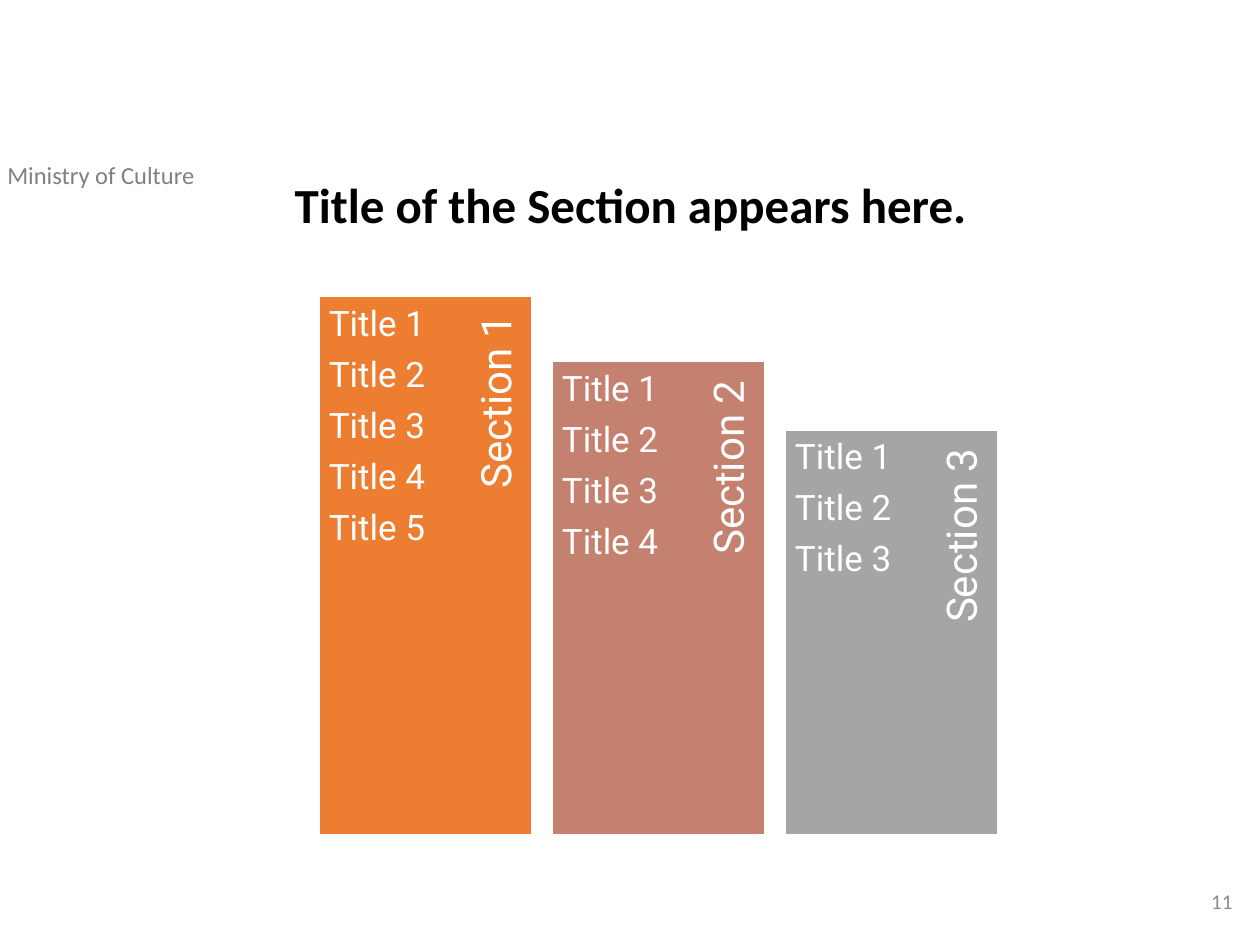
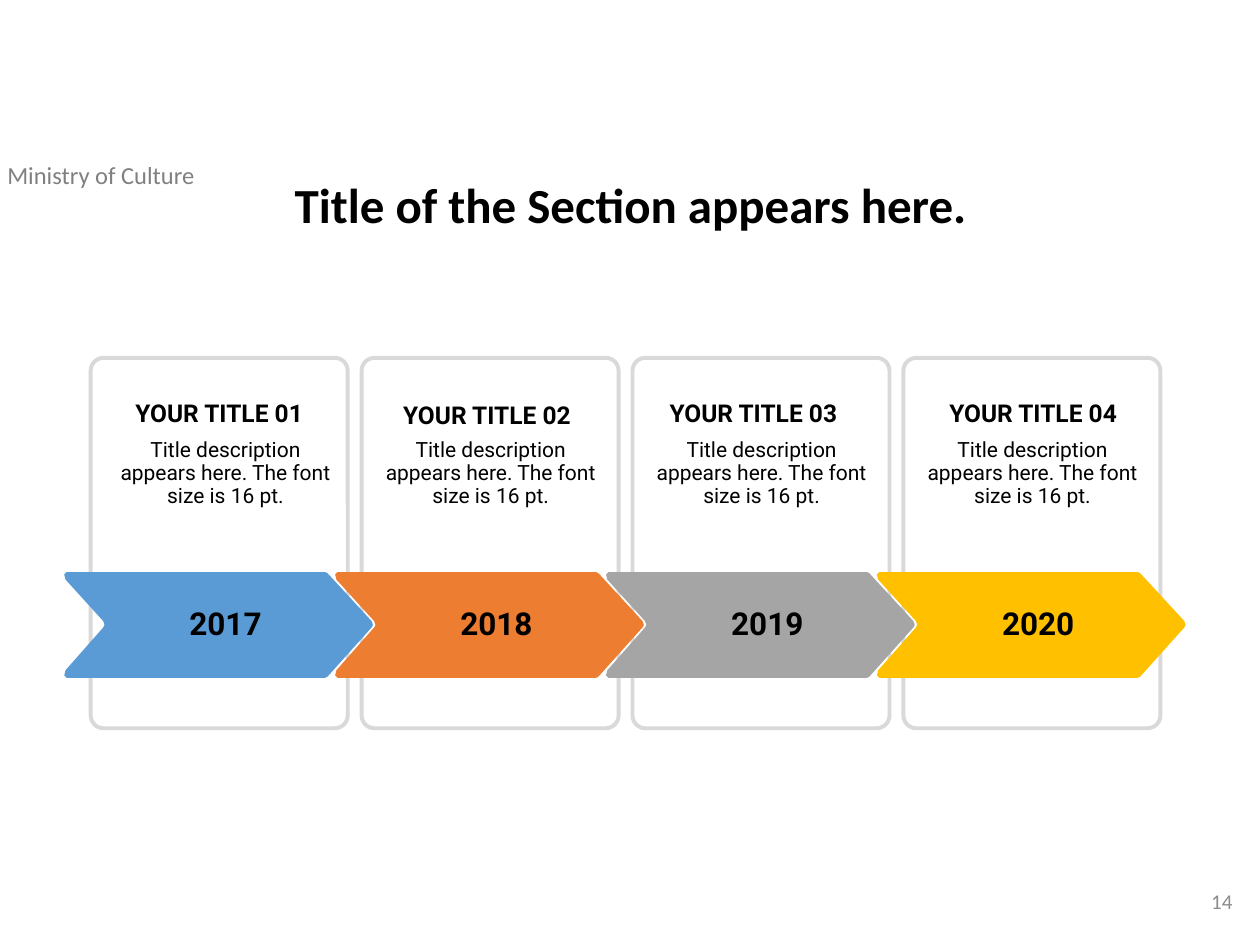
from dataclasses import dataclass
from typing import Any, NamedTuple

from pptx import Presentation
from pptx import util as u
from pptx.dml.color import RGBColor
from pptx.enum import shapes, text

PX = 9144


def px(length: int) -> u.Emu:
    return u.Emu(length * PX)


class Box(NamedTuple):
    left: int
    top: int
    width: int
    height: int

    def emu(self) -> list[u.Emu]:
        return [px(side) for side in self]


class Insets(NamedTuple):
    left: int = 10
    top: int = 5
    right: int = 10
    bottom: int = 5


@dataclass(frozen=True)
class Style:
    size: int
    font: str = "Roboto"
    color: str = "000000"
    bold: bool = False
    align: Any = text.PP_ALIGN.LEFT
    anchor: Any = text.MSO_ANCHOR.TOP
    insets: Insets = Insets()
    line_spacing: float = 1.0
    space_after: float = 0
    grows: bool = False


class Theme:
    white = "FFFFFF"
    blue = "5B9BD5"
    orange = "ED7D31"
    clay = "C48170"
    gray = "A5A5A5"
    gold = "FFC000"
    card_edge = "D9D9D9"
    ministry = Style(14, "Calibri", "808080", grows=True)
    title = Style(28, "Calibri", bold=True, line_spacing=0.9)
    number = Style(12, "Calibri", "8C8C8C", align=text.PP_ALIGN.RIGHT,
                   anchor=text.MSO_ANCHOR.MIDDLE)
    section = Style(24, color=white, align=text.PP_ALIGN.RIGHT,
                    anchor=text.MSO_ANCHOR.MIDDLE, insets=Insets(10, 0, 15, 3),
                    line_spacing=0.9, space_after=9)
    topics = Style(20, color=white, insets=Insets(8, 8, 8, 8),
                   line_spacing=0.9, space_after=7.5)
    heading = Style(14, bold=True, align=text.PP_ALIGN.CENTER,
                    anchor=text.MSO_ANCHOR.BOTTOM, grows=True)
    description = Style(12, align=text.PP_ALIGN.CENTER, insets=Insets(4, 2, 4, 2),
                        line_spacing=0.9, space_after=4.5, grows=True)
    year = Style(18, bold=True, align=text.PP_ALIGN.CENTER,
                 anchor=text.MSO_ANCHOR.MIDDLE, grows=True)


@dataclass(frozen=True)
class Section:
    name: str
    topic_count: int
    top: int
    color: str


@dataclass(frozen=True)
class Milestone:
    year: str
    color: str
    heading: str
    heading_box: Box
    description_width: int = 175


SECTIONS = [
    Section("Section 1", 5, 235, Theme.orange),
    Section("Section 2", 4, 287, Theme.clay),
    Section("Section 3", 3, 341, Theme.gray),
]
MILESTONES = [
    Milestone("2017", Theme.blue, "YOUR TITLE 01", Box(81, 310, 186, 34), 184),
    Milestone("2018", Theme.orange, "YOUR TITLE 02", Box(297, 312, 179, 34)),
    Milestone("2019", Theme.gray, "YOUR TITLE 03", Box(506, 310, 184, 34)),
    Milestone("2020", Theme.gold, "YOUR TITLE 04", Box(727, 310, 186, 34)),
]
DESCRIPTION = "Title description appears here. The font size is 16 pt."

SECTION_LEFT, SECTION_PITCH, SECTION_WIDTH, SECTION_BASE = 253, 185, 169, 663
MILESTONE_PITCH = 215
ARROW_OUTLINE = [
    (2, 6), (1, 2), (3, 0), (208, 0), (210, 1), (245, 39), (246, 42), (245, 44),
    (210, 83), (208, 84), (3, 84), (1, 82), (2, 78), (32, 44), (33, 42), (32, 39),
]


def apply(target: Any, values: dict[str, Any]) -> None:
    for name, value in values.items():
        setattr(target, name, value)


def write(slide: Any, box: Box, lines: list[str], style: Style, rotation: int = 0) -> None:
    label = slide.shapes.add_textbox(*box.emu())
    label.rotation = rotation
    frame = label.text_frame
    frame.text = "\n".join(lines)
    fit = text.MSO_AUTO_SIZE.SHAPE_TO_FIT_TEXT if style.grows else text.MSO_AUTO_SIZE.NONE
    apply(frame, {"word_wrap": True, "auto_size": fit, "vertical_anchor": style.anchor})
    apply(frame, {f"margin_{side}": px(inset)
                  for side, inset in zip(Insets._fields, style.insets)})
    for paragraph in frame.paragraphs:
        apply(paragraph, {"alignment": style.align, "line_spacing": style.line_spacing,
                          "space_after": u.Pt(style.space_after)})
        for run in paragraph.runs:
            apply(run.font, {"name": style.font, "size": u.Pt(style.size), "bold": style.bold})
            run.font.color.rgb = RGBColor.from_string(style.color)


def paint(shape: Any, fill: str | None, edge: str | None = None, weight: float = 1) -> None:
    shape.shadow.inherit = False
    for part, color in ((shape.fill, fill), (shape.line.fill, edge)):
        if color:
            part.solid()
            part.fore_color.rgb = RGBColor.from_string(color)
        else:
            part.background()
    if edge:
        shape.line.width = u.Pt(weight)


def add_page(deck: Any, number: str) -> Any:
    slide = deck.slides.add_slide(deck.slide_layouts[6])
    write(slide, Box(-4, 122, 290, 34), ["Ministry of Culture"], Theme.ministry)
    write(slide, Box(224, 139, 646, 79), ["Title of the Section appears here."], Theme.title)
    write(slide, Box(763, 695, 225, 40), [number], Theme.number)
    return slide


def draw_section(slide: Any, section: Section, left: int) -> None:
    height = SECTION_BASE - section.top
    bar = Box(left, section.top, SECTION_WIDTH, height)
    paint(slide.shapes.add_shape(shapes.MSO_SHAPE.RECTANGLE, *bar.emu()),
          section.color, Theme.white)
    length, thickness = round(height * 0.9), 44
    name_box = Box(left + 143 - length // 2, section.top + (length - thickness) // 2,
                   length, thickness)
    write(slide, name_box, [section.name], Theme.section, rotation=270)
    topics = [f"Title {n}" for n in range(1, section.topic_count + 1)]
    write(slide, Box(left, section.top, 120, height + 2), topics, Theme.topics)


def draw_card(slide: Any, milestone: Milestone, shift: int) -> None:
    card = slide.shapes.add_shape(shapes.MSO_SHAPE.ROUNDED_RECTANGLE,
                                  *Box(72 + shift, 284, 204, 294).emu())
    card.adjustments[0] = 0.05
    paint(card, None, Theme.card_edge, 2.25)
    write(slide, Box(87 + shift, 347, milestone.description_width, 58),
          [DESCRIPTION], Theme.description)
    write(slide, milestone.heading_box, [milestone.heading], Theme.heading)


def draw_arrow(slide: Any, milestone: Milestone, shift: int) -> None:
    outline = [(50 + shift + x, 454 + y) for x, y in ARROW_OUTLINE]
    builder = slide.shapes.build_freeform(*outline[0], scale=PX)
    builder.add_line_segments(outline[1:], close=True)
    paint(builder.convert_to_shape(), milestone.color)
    write(slide, Box(138 + shift, 474, 82, 40), [milestone.year], Theme.year)


def main() -> None:
    deck = Presentation()
    apply(deck, {"slide_width": px(1000), "slide_height": px(750)})

    sections_page = add_page(deck, "11")
    for i, section in enumerate(SECTIONS):
        draw_section(sections_page, section, SECTION_LEFT + i * SECTION_PITCH)

    timeline_page = add_page(deck, "14")
    for draw in (draw_card, draw_arrow):
        for i, milestone in enumerate(MILESTONES):
            draw(timeline_page, milestone, i * MILESTONE_PITCH)

    deck.save("out.pptx")


if __name__ == "__main__":
    main()
